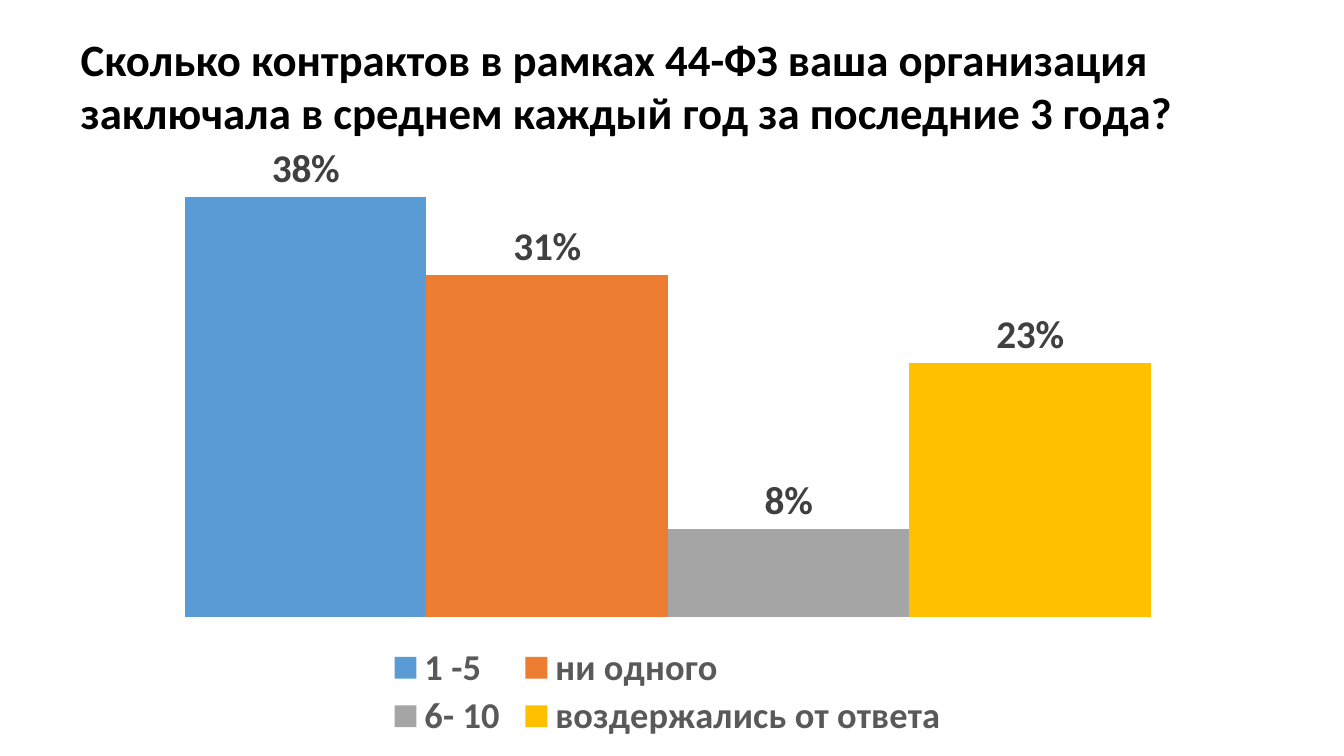
"""Build a survey slide with a clustered column chart of contract counts."""
from dataclasses import dataclass

from lxml import etree
from pptx import Presentation, util as u
from pptx.chart.data import CategoryChartData
from pptx.dml.color import RGBColor
from pptx.enum import chart as ch, text
from pptx.oxml.ns import qn

TITLE = "Сколько контрактов в рамках 44-ФЗ ваша организация заключала в среднем каждый год за последние 3 года?"
ANSWERS = [
    ("1 -5", 0.38, "5B9BD5"),
    ("ни одного", 0.31, "ED7D31"),
    ("6- 10", 0.08, "A5A5A5"),
    ("воздержались от ответа", 0.23, "FFC000"),
]

WIDTH, HEIGHT = 13.33, 7.5
LEFT, TITLE_TOP, CHART_TOP = 0.7, 0.26, 1.44
CHART_WIDTH, CHART_HEIGHT = 11.85, 5.93
PLOT_SHARES = (0.02, 0.05, 0.96, 0.74)
LEGEND_SHARES = (0.26, 0.83, 0.48, 0.17)


@dataclass(frozen=True)
class Theme:
    font: str = "Calibri"
    title: str = "000000"
    label: str = "404040"
    legend: str = "595959"
    title_size: int = 32
    label_size: int = 28
    legend_size: int = 26


THEME = Theme()


def style(font, size, color):
    font.name, font.size, font.bold = THEME.font, u.Pt(size), True
    font.color.rgb = RGBColor.from_string(color)


def manual_layout(shares, inner=False):
    layout = etree.Element(qn("c:layout"))
    manual = etree.SubElement(layout, qn("c:manualLayout"))
    settings = [("layoutTarget", "inner")] if inner else []
    settings += [("xMode", "edge"), ("yMode", "edge"), *zip("xywh", shares)]
    for tag, value in settings:
        etree.SubElement(manual, qn(f"c:{tag}")).set("val", str(value))
    return layout


def add_title(s):
    sp = s.shapes.title
    sp.left, sp.top = u.Inches(LEFT), u.Inches(TITLE_TOP)
    sp.width, sp.height = u.Inches(WIDTH - LEFT), u.Inches(CHART_TOP - TITLE_TOP)
    tf = sp.text_frame
    tf.text = TITLE
    tf.word_wrap = True
    tf.auto_size = text.MSO_AUTO_SIZE.NONE
    tf.vertical_anchor = text.MSO_ANCHOR.TOP
    p = tf.paragraphs[0]
    p.alignment = text.PP_ALIGN.LEFT
    style(p.font, THEME.title_size, THEME.title)


def add_answers(s):
    data = CategoryChartData(number_format="0%")
    data.categories = ["1"]
    for name, share, _ in ANSWERS:
        data.add_series(name, [share])
    box = map(u.Inches, (LEFT, CHART_TOP, CHART_WIDTH, CHART_HEIGHT))
    chart = s.shapes.add_chart(ch.XL_CHART_TYPE.COLUMN_CLUSTERED, *box, data).chart
    style(chart.font, THEME.label_size, THEME.title)
    chart.has_title = False

    value_axis = chart.value_axis
    value_axis.minimum_scale, value_axis.maximum_scale = 0, 0.4
    value_axis.has_major_gridlines = False
    value_axis.tick_labels.number_format = "0%"
    value_axis.tick_labels.number_format_is_linked = False
    value_axis.visible = chart.category_axis.visible = False

    plot = chart.plots[0]
    plot.gap_width, plot.overlap, plot.vary_by_categories = 75, 0, False
    for series, (_, _, color) in zip(plot.series, ANSWERS):
        series.format.fill.solid()
        series.format.fill.fore_color.rgb = RGBColor.from_string(color)
        labels = series.data_labels
        labels.show_value = True
        labels.number_format, labels.number_format_is_linked = "0%", False
        labels.position = ch.XL_LABEL_POSITION.OUTSIDE_END
        style(labels.font, THEME.label_size, THEME.label)

    chart.has_legend = True
    legend = chart.legend
    legend.position = ch.XL_LEGEND_POSITION.BOTTOM
    legend.include_in_layout = False
    style(legend.font, THEME.legend_size, THEME.legend)

    root = chart.element
    plot_area = root.find(".//" + qn("c:plotArea"))
    legend_xml = root.find(".//" + qn("c:legend"))
    for parent in (plot_area, legend_xml):
        for old in parent.findall(qn("c:layout")):
            parent.remove(old)
    plot_area.insert(0, manual_layout(PLOT_SHARES, inner=True))
    legend_xml.find(qn("c:legendPos")).addnext(manual_layout(LEGEND_SHARES))


def main():
    prs = Presentation()
    prs.slide_width, prs.slide_height = u.Inches(WIDTH), u.Inches(HEIGHT)
    s = prs.slides.add_slide(prs.slide_layouts.get_by_name("Title Only"))
    add_title(s)
    add_answers(s)
    prs.save("out.pptx")


if __name__ == "__main__":
    main()
